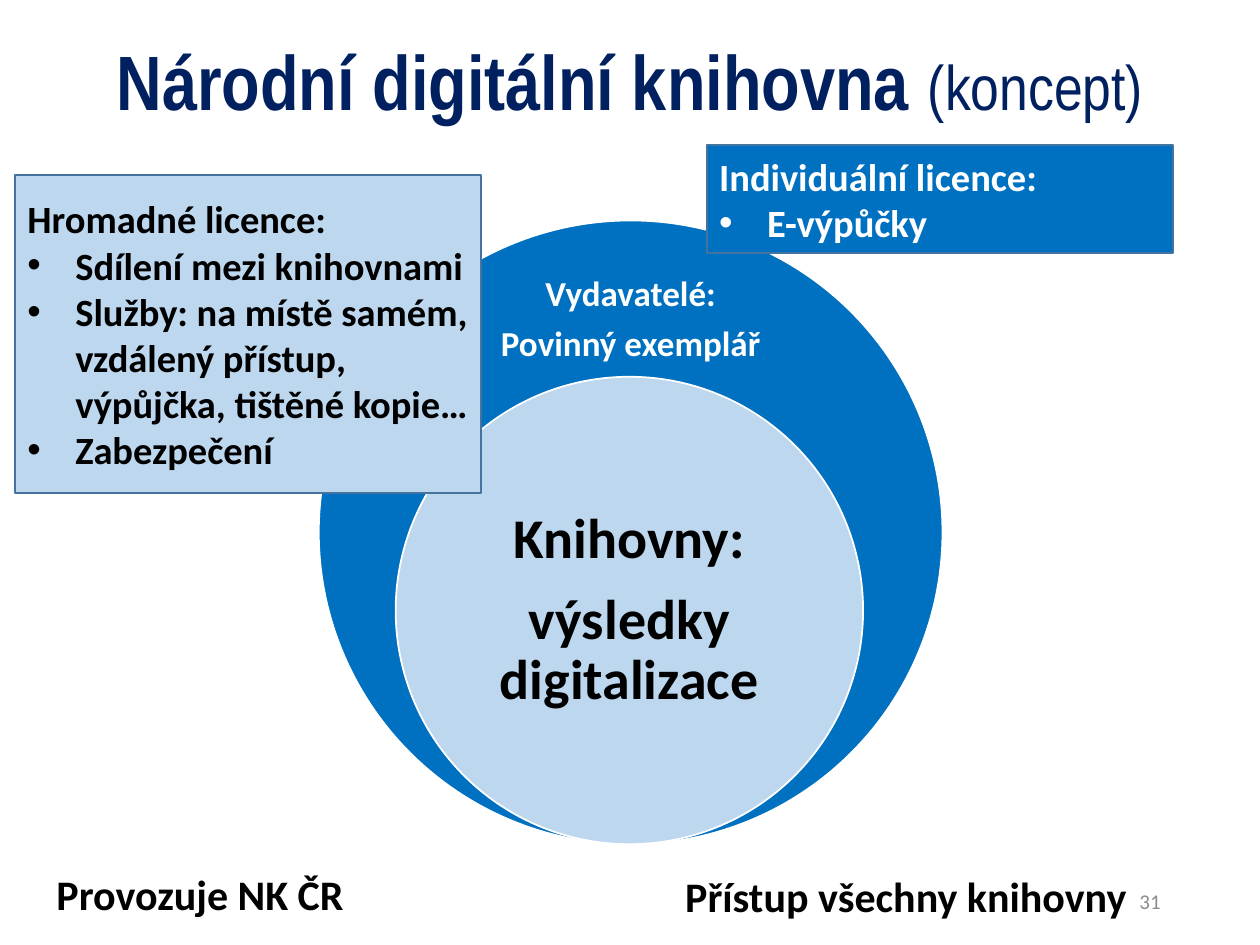
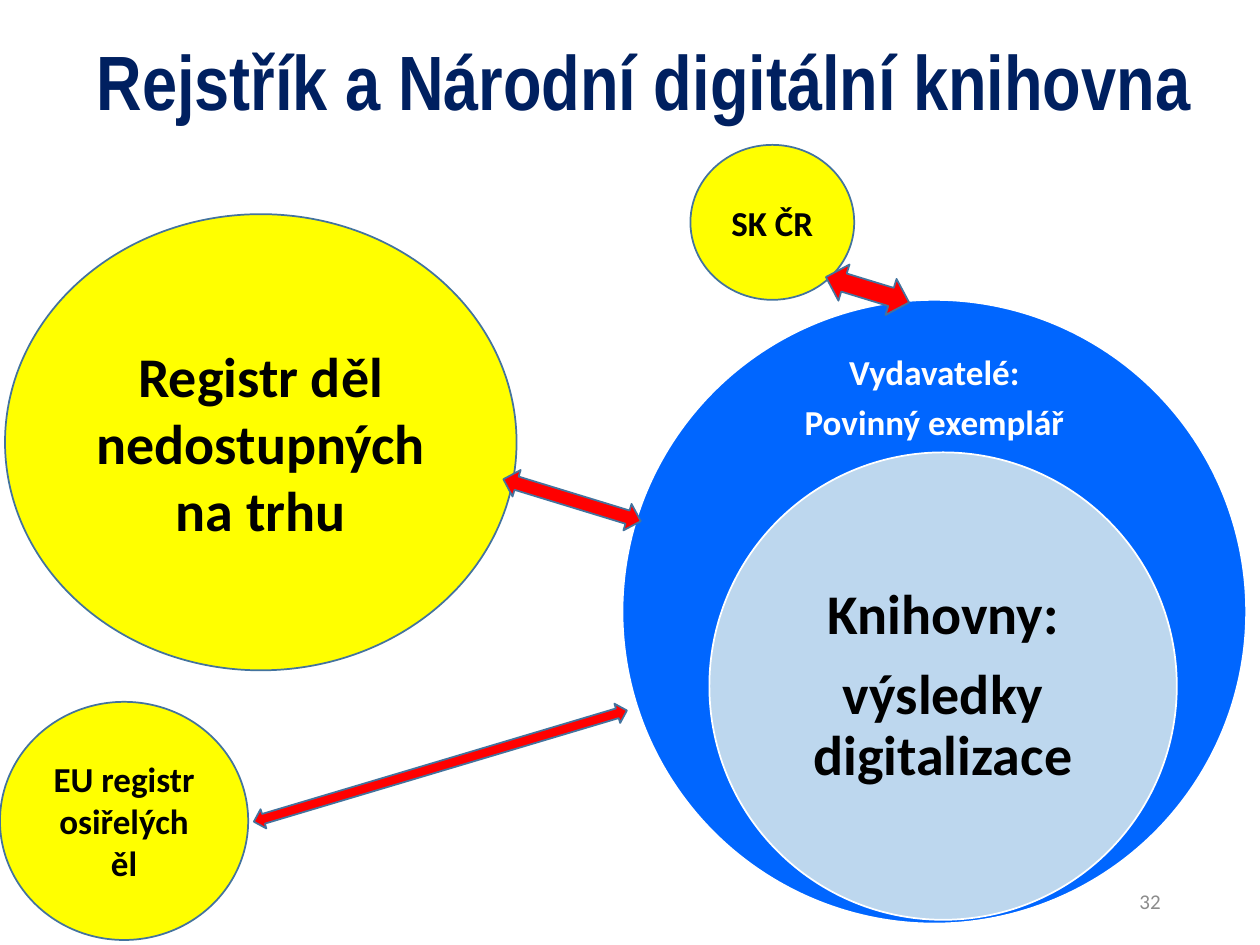
from lxml.etree import SubElement
from pptx import Presentation
from pptx.dml.color import RGBColor
from pptx.enum.shapes import MSO_SHAPE
from pptx.enum.text import MSO_ANCHOR, PP_ALIGN
from pptx.oxml.ns import qn
from pptx.util import Inches, Pt

NAVY = RGBColor(0x00, 0x20, 0x60)
BLUE = RGBColor(0x00, 0x70, 0xC0)
BRIGHT_BLUE = RGBColor(0x00, 0x66, 0xFF)
PALE_BLUE = RGBColor(0xBD, 0xD7, 0xEE)
OUTLINE = RGBColor(0x43, 0x73, 0x9E)
YELLOW = RGBColor(0xFF, 0xFF, 0x00)
RED = RGBColor(0xFF, 0x00, 0x00)
GREY = RGBColor(0x8C, 0x8C, 0x8C)
WHITE = RGBColor(0xFF, 0xFF, 0xFF)
BLACK = RGBColor(0x00, 0x00, 0x00)

COLUMNS, ROWS = 100, 75
TITLE_FONT, BODY_FONT = "Arial Narrow", "Calibri"
BULLET_INDENT = Inches(0.38)
RING, CORE = 49.5, 37.1  # diameters of the two nested circles


class Deck:
    """Builds slides on a grid of COLUMNS x ROWS cells."""

    def __init__(self):
        self.prs = Presentation()
        self.prs.slide_width, self.prs.slide_height = Inches(10), Inches(7.5)
        self.s = None

    def box(self, x, y, w, h):
        """Turn grid units into left, top, width and height."""
        col, row = self.prs.slide_width / COLUMNS, self.prs.slide_height / ROWS
        return round(x * col), round(y * row), round(w * col), round(h * row)

    def new_slide(self, number, title, title_width, subtitle=None):
        self.s = self.prs.slides.add_slide(self.prs.slide_layouts[6])
        p = self.text((5, 2.1, title_width, 9.4), [title], 44, NAVY,
                      align=PP_ALIGN.CENTER, font=TITLE_FONT, spacing=0.9)
        if subtitle:
            self.run(p, subtitle, 36, NAVY, TITLE_FONT, bold=False)
        self.text((70.6, 69.5, 22.5, 4), [number], 12, GREY,
                  align=PP_ALIGN.RIGHT, bold=False)

    def run(self, p, text, size, color, font=BODY_FONT, bold=True):
        r = p.add_run()
        r.text = text
        r.font.name, r.font.size, r.font.bold = font, Pt(size), bold
        r.font.color.rgb = color

    def bullet(self, p):
        pPr = p._p.get_or_add_pPr()
        pPr.set("marL", str(BULLET_INDENT))
        pPr.set("indent", str(-BULLET_INDENT))
        SubElement(pPr, qn("a:buFont")).set("typeface", "Arial")
        SubElement(pPr, qn("a:buChar")).set("char", "•")

    def fill_frame(self, tf, lines, size, color, align=PP_ALIGN.LEFT, font=BODY_FONT,
                   bold=True, anchor=MSO_ANCHOR.MIDDLE, spacing=None, after=0,
                   inset=None, bulleted=False):
        """Write one paragraph per line and return the last paragraph."""
        tf.word_wrap, tf.vertical_anchor = True, anchor
        if inset:
            tf.margin_left = tf.margin_right = Inches(inset)
            tf.margin_top = tf.margin_bottom = Inches(inset)
        for i, line in enumerate(lines):
            p = tf.add_paragraph() if i else tf.paragraphs[0]
            p.alignment = align
            if spacing:
                p.line_spacing = spacing
            if after:
                p.space_after = Pt(after)
            if bulleted and i:
                self.bullet(p)
            self.run(p, line, size, color, font, bold)
        return p

    def text(self, area, lines, size, color, **style):
        tf = self.s.shapes.add_textbox(*self.box(*area)).text_frame
        return self.fill_frame(tf, lines, size, color, **style)

    def shape(self, kind, area, fill, line=OUTLINE, rotation=0):
        sp = self.s.shapes.add_shape(kind, *self.box(*area))
        sp.shadow.inherit = False
        sp.fill.solid()
        sp.fill.fore_color.rgb = fill
        sp.line.color.rgb, sp.line.width = line, Pt(1)
        sp.rotation = rotation
        return sp

    def licence_card(self, area, lines, fill, color):
        """Draw a panel with a heading line and bullets below it."""
        sp = self.shape(MSO_SHAPE.RECTANGLE, area, fill)
        self.fill_frame(sp.text_frame, lines, 22, color, bulleted=True)

    def register(self, area, label, size):
        sp = self.shape(MSO_SHAPE.OVAL, area, YELLOW)
        self.fill_frame(sp.text_frame, [label], size, BLACK, align=PP_ALIGN.CENTER)

    def link(self, area, rotation):
        self.shape(MSO_SHAPE.LEFT_RIGHT_ARROW, area, RED, rotation=rotation)

    def library(self, x, y, core_x, core_y, fill):
        """Draw the publishers' ring with the libraries' circle inside."""
        self.shape(MSO_SHAPE.OVAL, (x, y, RING, RING), fill, WHITE)
        self.ring_text((x + 11.75, y + 3.7, 26, 8.4),
                       ["Vydavatelé:", "Povinný exemplář"], 20, WHITE, 0.16)
        self.shape(MSO_SHAPE.OVAL, (core_x, core_y, CORE, CORE), PALE_BLUE, WHITE)
        self.ring_text((core_x + 5.45, core_y + 9.3, 26.2, 18.6),
                       ["Knihovny:", "výsledky digitalizace"], 32, BLACK, 0.25)

    def ring_text(self, area, lines, size, color, inset):
        self.text(area, lines, size, color, align=PP_ALIGN.CENTER,
                  spacing=0.9, after=0.35 * size, inset=inset)


def concept_slide(deck):
    deck.new_slide("31", "Národní digitální knihovna ", 90, "(koncept)")
    deck.library(25.3, 17.5, 31.4, 29.9, BLUE)
    deck.licence_card((1.2, 13.9, 37, 25.2), [
        "Hromadné licence:",
        "Sdílení mezi knihovnami",
        "Služby: na místě samém, vzdálený přístup, výpůjčka, tištěné kopie…",
        "Zabezpečení",
    ], PALE_BLUE, BLACK)
    deck.licence_card((56.1, 11.5, 37, 8.6),
                      ["Individuální licence:", "E-výpůčky"], BLUE, WHITE)
    for area, note in [((3.5, 68.4, 29.7, 5), "Provozuje NK ČR"),
                       ((53.4, 68.6, 43.7, 5.1), "Přístup všechny knihovny")]:
        deck.text(area, [note], 24, BLACK, anchor=MSO_ANCHOR.TOP)


def register_slide(deck):
    deck.new_slide("32", "Rejstřík a Národní digitální knihovna", 92.3)
    deck.library(49.4, 23.8, 56.3, 35.9, BRIGHT_BLUE)
    deck.register((0.4, 17, 40.6, 36.2), "Registr děl nedostupných na trhu", 32)
    deck.register((0, 55.7, 19.7, 18.9), "EU registr osiřelých ěl", 20)
    deck.register((54.8, 11.5, 13, 12.3), "SK ČR", 20)
    deck.link((19.5, 60, 30.9, 1.6), 343.4)
    deck.link((39.7, 38.6, 11.4, 2.2), 17)
    deck.link((65.4, 21.5, 6.9, 3), 17)


def main():
    deck = Deck()
    concept_slide(deck)
    register_slide(deck)
    deck.prs.save("out.pptx")


if __name__ == "__main__":
    main()
